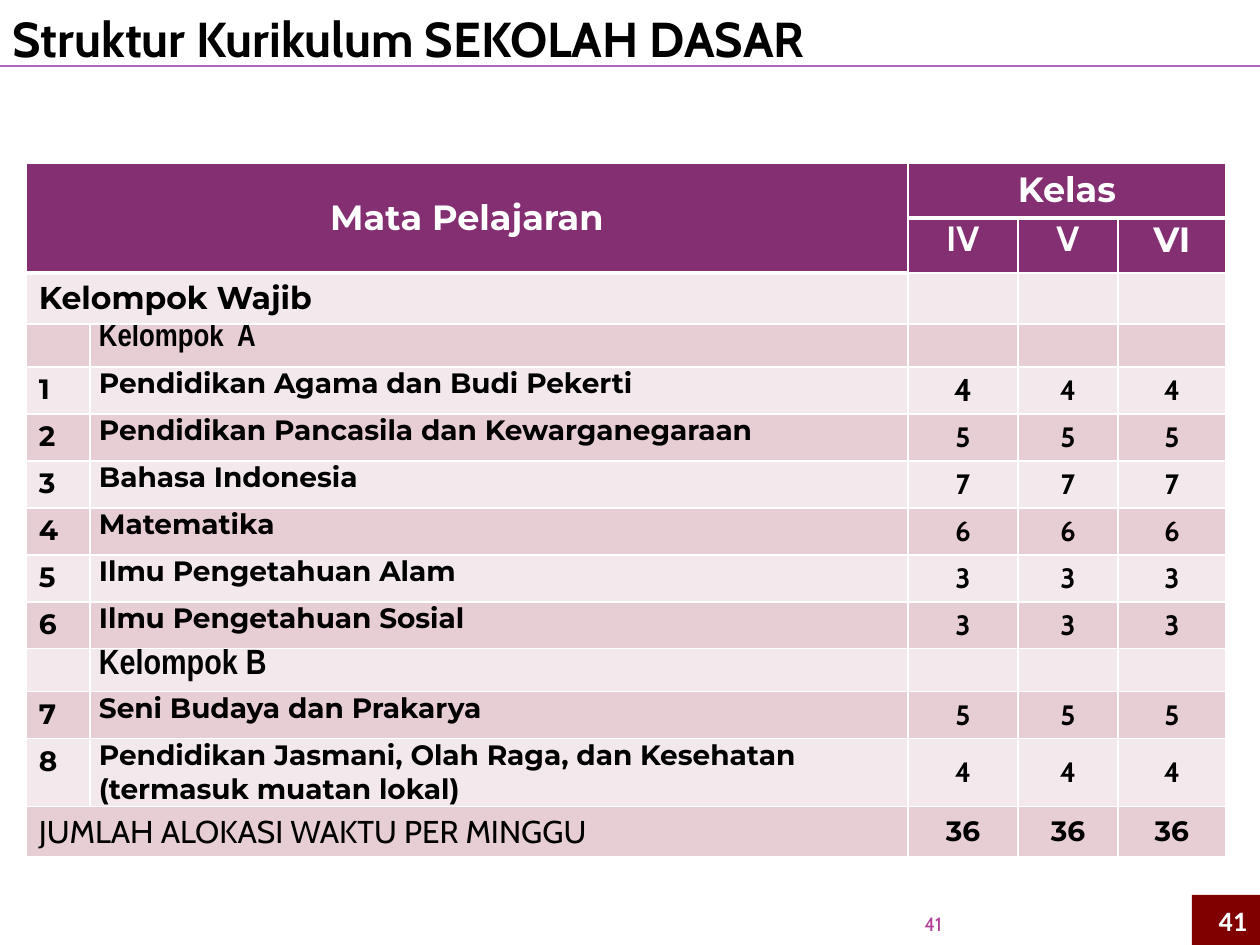
from lxml import etree
from pptx import Presentation
from pptx.dml.color import RGBColor
from pptx.enum.shapes import MSO_CONNECTOR as Connector, MSO_SHAPE as Shape
from pptx.enum.text import MSO_ANCHOR as Anchor, PP_ALIGN as Align
from pptx.oxml.ns import qn
from pptx.util import Pt

PX = 914400 // 126
PURPLE, PALE, ROSE, WHITE, BLACK = "852F73", "F3E8EB", "E6CED4", "FFFFFF", "000000"
SUBJECT_COLUMNS = 2
COLUMN_WIDTHS = [64, 818, 110, 100, 108]
GRADES = ["IV", "V", "VI"]
GROUP_A = [
    ("Pendidikan Agama dan Budi Pekerti", 4),
    ("Pendidikan Pancasila dan Kewarganegaraan", 5),
    ("Bahasa Indonesia", 7),
    ("Matematika", 6),
    ("Ilmu Pengetahuan Alam", 3),
    ("Ilmu Pengetahuan Sosial", 3),
]
GROUP_B = [
    ("Seni Budaya dan Prakarya", 5),
    ("Pendidikan Jasmani, Olah Raga, dan Kesehatan (termasuk muatan lokal)", 4),
]
ROW_HEIGHTS = [55, 55, 51, 43] + [47] * len(GROUP_A) + [43, 47, 68, 50]


def px(*lengths):
    """Turn pixel lengths into EMU."""
    return [length * PX for length in lengths]


def color(hex_string):
    """Return the colour for a hex string."""
    return RGBColor.from_string(hex_string)


def write(holder, text, size=16, font="Montserrat", ink=BLACK, bold=True, align=Align.LEFT):
    """Write one formatted paragraph into a shape or table cell."""
    paragraph = holder.text_frame.paragraphs[0]
    paragraph.alignment = align
    run = paragraph.add_run()
    run.text = text
    run.font.size = Pt(size)
    run.font.name = font
    run.font.bold = bold
    run.font.color.rgb = color(ink)


def set_margins(holder, horizontal, vertical):
    """Set the inner margins of a cell or text frame."""
    holder.margin_left = holder.margin_right = horizontal * PX
    holder.margin_top = holder.margin_bottom = vertical * PX


def border_width(row, column):
    """Return the width in points of the border below a cell."""
    return 3 if row == 0 or (row == 1 and column < SUBJECT_COLUMNS) else 1


def add_borders(cell, row, column):
    """Give a cell white borders, thick under the header."""
    widths = {"L": 1, "R": 1, "T": border_width(row - 1, column), "B": border_width(row, column)}
    properties = cell._tc.get_or_add_tcPr()
    for index, (side, width) in enumerate(widths.items()):
        line = etree.Element(qn(f"a:ln{side}"), w=str(Pt(width)))
        fill = etree.SubElement(line, qn("a:solidFill"))
        etree.SubElement(fill, qn("a:srgbClr"), val=WHITE)
        properties.insert(index, line)


def fill_cell(cell, text, padded=False, middle=False, **text_format):
    """Place text in a cell with its margins and anchor."""
    set_margins(cell, *((13, 6) if padded else (9, 0)))
    cell.vertical_anchor = Anchor.MIDDLE if middle else Anchor.TOP
    write(cell, text, **text_format)


def add_grid(slide, left, top):
    """Add the empty banded table and return it."""
    size = px(left, top, sum(COLUMN_WIDTHS), sum(ROW_HEIGHTS))
    table = slide.shapes.add_table(len(ROW_HEIGHTS), len(COLUMN_WIDTHS), *size).table
    for column, width in zip(table.columns, px(*COLUMN_WIDTHS)):
        column.width = width
    for r, (row, height) in enumerate(zip(table.rows, px(*ROW_HEIGHTS))):
        row.height = height
        for c, cell in enumerate(row.cells):
            set_margins(cell, 9, 0)
            cell.fill.solid()
            cell.fill.fore_color.rgb = color(PURPLE if r < 2 else ROSE if r % 2 else PALE)
            add_borders(cell, r, c)
    return table


def add_header(table):
    """Fill the two header rows."""
    heading = dict(size=20, ink=WHITE, align=Align.CENTER)
    table.cell(0, 0).merge(table.cell(1, 1))
    table.cell(0, 2).merge(table.cell(0, 4))
    fill_cell(table.cell(0, 0), "Mata Pelajaran", padded=True, middle=True, **heading)
    fill_cell(table.cell(0, 2), "Kelas", padded=True, **heading)
    for column, grade in enumerate(GRADES, SUBJECT_COLUMNS):
        font = "Montserrat" if grade == "VI" else "Cabin"
        fill_cell(table.cell(1, column), grade, font=font, **heading)


def add_hours(table, row, hours, **text_format):
    """Fill the weekly hours of every grade in one row."""
    for column in range(SUBJECT_COLUMNS, len(COLUMN_WIDTHS)):
        first = row == 4 and column == SUBJECT_COLUMNS
        fill_cell(table.cell(row, column), str(hours), middle=True,
                  size=18 if first else 16, align=Align.CENTER, **text_format)


def add_group(table, top_row, name, name_size, first_number, subjects):
    """Fill a group heading and its numbered subjects."""
    fill_cell(table.cell(top_row, 1), name, size=name_size, font="Arial Narrow")
    for offset, (subject, hours) in enumerate(subjects):
        row = top_row + 1 + offset
        fill_cell(table.cell(row, 0), str(first_number + offset), padded=True)
        fill_cell(table.cell(row, 1), subject)
        add_hours(table, row, hours, font="Cabin")


def add_curriculum(slide, left, top):
    """Add the curriculum table."""
    table = add_grid(slide, left, top)
    total_row = len(ROW_HEIGHTS) - 1
    add_header(table)
    for row in (2, total_row):
        table.cell(row, 0).merge(table.cell(row, 1))
    fill_cell(table.cell(2, 0), "Kelompok Wajib", padded=True, size=18)
    add_group(table, 3, "Kelompok  A", 18, 1, GROUP_A)
    add_group(table, 4 + len(GROUP_A), "Kelompok B", 20, 1 + len(GROUP_A), GROUP_B)
    fill_cell(table.cell(total_row, 0), "JUMLAH ALOKASI WAKTU PER MINGGU",
              padded=True, size=18, font="Cabin", bold=False)
    add_hours(table, total_row, 36)


def add_title(slide, left, top, width, height):
    """Place the title and the rule near its bottom."""
    title = slide.shapes.title
    title.left, title.top, title.width, title.height = px(left, top, width, height)
    set_margins(title.text_frame, 13, 6)
    title.text_frame.vertical_anchor = Anchor.MIDDLE
    write(title, "Struktur Kurikulum SEKOLAH DASAR", size=28, font="Cabin")
    rule_y = top + height - 10
    rule = slide.shapes.add_connector(Connector.STRAIGHT, *px(left, rule_y, left + width, rule_y))
    rule.line.color.rgb = color("AC66BB")
    rule.line.width = Pt(0.9)
    etree.SubElement(rule._element.spPr, qn("a:effectLst"))


def add_page_number(slide, left, top, width, height):
    """Add the small page number."""
    number = slide.shapes.add_textbox(*px(left, top, width, height))
    number.text_frame.word_wrap = True
    number.text_frame.vertical_anchor = Anchor.BOTTOM
    set_margins(number.text_frame, 0, 0)
    write(number, "41", size=11, font="Cabin", ink="B13F9A", bold=False, align=Align.RIGHT)


def add_page_badge(slide, left, top, width, height):
    """Add the page number on its dark red block."""
    badge = slide.shapes.add_shape(Shape.RECTANGLE, *px(left, top, width, height))
    badge.shadow.inherit = False
    badge.fill.solid()
    badge.fill.fore_color.rgb = color("800000")
    badge.line.fill.background()
    badge.text_frame.vertical_anchor = Anchor.MIDDLE
    set_margins(badge.text_frame, 13, 6)
    write(badge, "41", font="Calibri", ink=WHITE, align=Align.RIGHT)


def main():
    """Build and save the slide."""
    deck = Presentation()
    deck.slide_width, deck.slide_height = px(1260, 945)
    slide = deck.slides.add_slide(deck.slide_layouts[5])
    add_page_number(slide, 862, 903, 80, 32)
    add_curriculum(slide, 26, 163)
    add_title(slide, 0, 0, 1260, 76)
    add_page_badge(slide, 1192, 895, 68, 50)
    deck.save("out.pptx")


if __name__ == "__main__":
    main()
